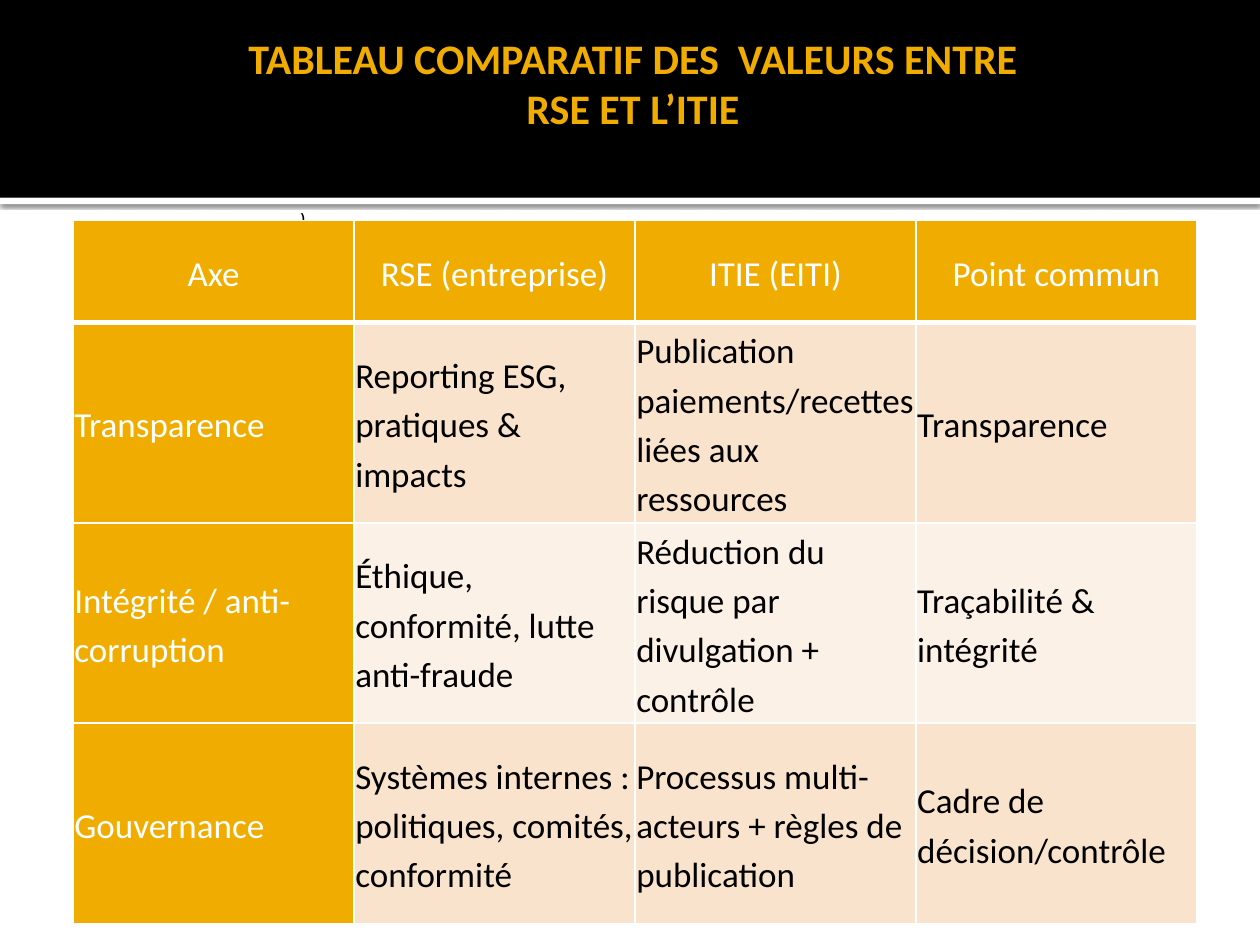
from lxml import etree
from pptx import Presentation
from pptx.dml.color import RGBColor
from pptx.enum import shapes, text
from pptx.oxml import parse_xml
from pptx.oxml.ns import nsdecls, qn
from pptx.util import Inches, Pt

COLORS = {
    "black": "000000", "white": "FFFFFF", "gold": "F0AD00",
    "peach": "F9E3CC", "cream": "FCF1E7",
}
TITLE = "TABLEAU COMPARATIF DES  VALEURS ENTRE\vRSE ET L’ITIE"
ROWS = [
    ["Axe", "RSE (entreprise)", "ITIE (EITI)", "Point commun"],
    ["Transparence", "Reporting ESG, pratiques & impacts",
     "Publication paiements/recettes liées aux ressources", "Transparence"],
    ["Intégrité / anti-corruption", "Éthique, conformité, lutte anti-fraude",
     "Réduction du risque par divulgation + contrôle", "Traçabilité & intégrité"],
    ["Gouvernance", "Systèmes internes : politiques, comités, conformité",
     "Processus multi-acteurs + règles de publication", "Cadre de décision/contrôle"],
]
COLUMN_WIDTH = 2.23
HEADER_HEIGHT, BODY_HEIGHT = 0.81, 1.59
SIDES = ("left", "top", "right", "bottom")


def color(name):
    return RGBColor.from_string(COLORS[name])


def apply(target, values):
    for name, value in values.items():
        setattr(target, name, value)


def set_margins(target, margins):
    apply(target, {f"margin_{side}": Inches(m) for side, m in zip(SIDES, margins)})


def write(paragraph, words, ink, **font):
    paragraph.text = words
    for run in paragraph.runs:
        apply(run.font, font)
        run.font.color.rgb = color(ink)


def add_band(slide, top, height, fill):
    band = slide.shapes.add_shape(
        shapes.MSO_SHAPE.RECTANGLE, 0, Inches(top), Inches(10), Inches(height))
    band.shadow.inherit = False
    band.fill.solid()
    band.fill.fore_color.rgb = color(fill)
    band.line.fill.background()
    return band


def add_shadow(shape):
    effects = shape._element.spPr.find(qn("a:effectLst"))
    shadow = etree.SubElement(
        effects, qn("a:outerShdw"), blurRad=str(Pt(2.5)), dist=str(Pt(0.8)),
        dir="5400000", algn="tl", rotWithShape="0")
    ink = etree.SubElement(shadow, qn("a:srgbClr"), val=COLORS["black"])
    etree.SubElement(ink, qn("a:alpha"), val="60000")


def add_text(slide, box, words, ink, anchor, alignment, margins, wrap, **font):
    frame = slide.shapes.add_textbox(*map(Inches, box)).text_frame
    apply(frame, {"word_wrap": wrap, "vertical_anchor": anchor})
    set_margins(frame, margins)
    frame.paragraphs[0].alignment = alignment
    write(frame.paragraphs[0], words, ink, **font)


def add_borders(cell, bottom):
    properties = cell._tc.get_or_add_tcPr()
    for index, (side, width) in enumerate(zip("LRTB", (1, 1, 1, bottom))):
        properties.insert(index, parse_xml(
            f'<a:ln{side} {nsdecls("a")} w="{Pt(width)}"><a:solidFill>'
            f'<a:srgbClr val="{COLORS["white"]}"/></a:solidFill></a:ln{side}>'))


def add_comparison(slide):
    heights = [HEADER_HEIGHT] + [BODY_HEIGHT] * (len(ROWS) - 1)
    columns = len(ROWS[0])
    table = slide.shapes.add_table(
        len(ROWS), columns, Inches(0.58), Inches(1.75),
        Inches(COLUMN_WIDTH * columns), Inches(sum(heights))).table
    for column in table.columns:
        column.width = Inches(COLUMN_WIDTH)
    for r, (values, height) in enumerate(zip(ROWS, heights)):
        table.rows[r].height = Inches(height)
        for c, value in enumerate(values):
            cell = table.cell(r, c)
            heading = r == 0 or c == 0
            fill = "gold" if heading else "peach" if r % 2 else "cream"
            cell.fill.solid()
            cell.fill.fore_color.rgb = color(fill)
            cell.vertical_anchor = text.MSO_ANCHOR.MIDDLE
            set_margins(cell, [0.01] * 4)
            paragraph = cell.text_frame.paragraphs[0]
            apply(paragraph, {
                "alignment": text.PP_ALIGN.LEFT if r else text.PP_ALIGN.CENTER,
                "line_spacing": 1.15})
            write(paragraph, value, "white" if heading else "black",
                  name="Calibri", size=Pt(20), bold=False)
            add_borders(cell, 1 if r else 3)


def main():
    presentation = Presentation()
    apply(presentation, {"slide_width": Inches(10), "slide_height": Inches(7.5)})
    slide = presentation.slides.add_slide(presentation.slide_layouts[6])
    add_shadow(add_band(slide, 1.57, 0.05, "white"))
    add_band(slide, 0, 1.57, "black")
    add_text(slide, (0.5, 0.17, 9, 1.37), TITLE, "gold", text.MSO_ANCHOR.MIDDLE,
             text.PP_ALIGN.CENTER, (0.1, 0.05, 0.05, 0.45), True,
             name="Calibri", size=Pt(24), bold=True)
    add_text(slide, (2.29, 1.62, 0.24, 0.52), ")", "black", text.MSO_ANCHOR.TOP,
             text.PP_ALIGN.LEFT, (0.1, 0.05, 0.1, 0.05), False,
             name="Arial", size=Pt(7), bold=True)
    add_comparison(slide)
    presentation.save("out.pptx")


if __name__ == "__main__":
    main()
